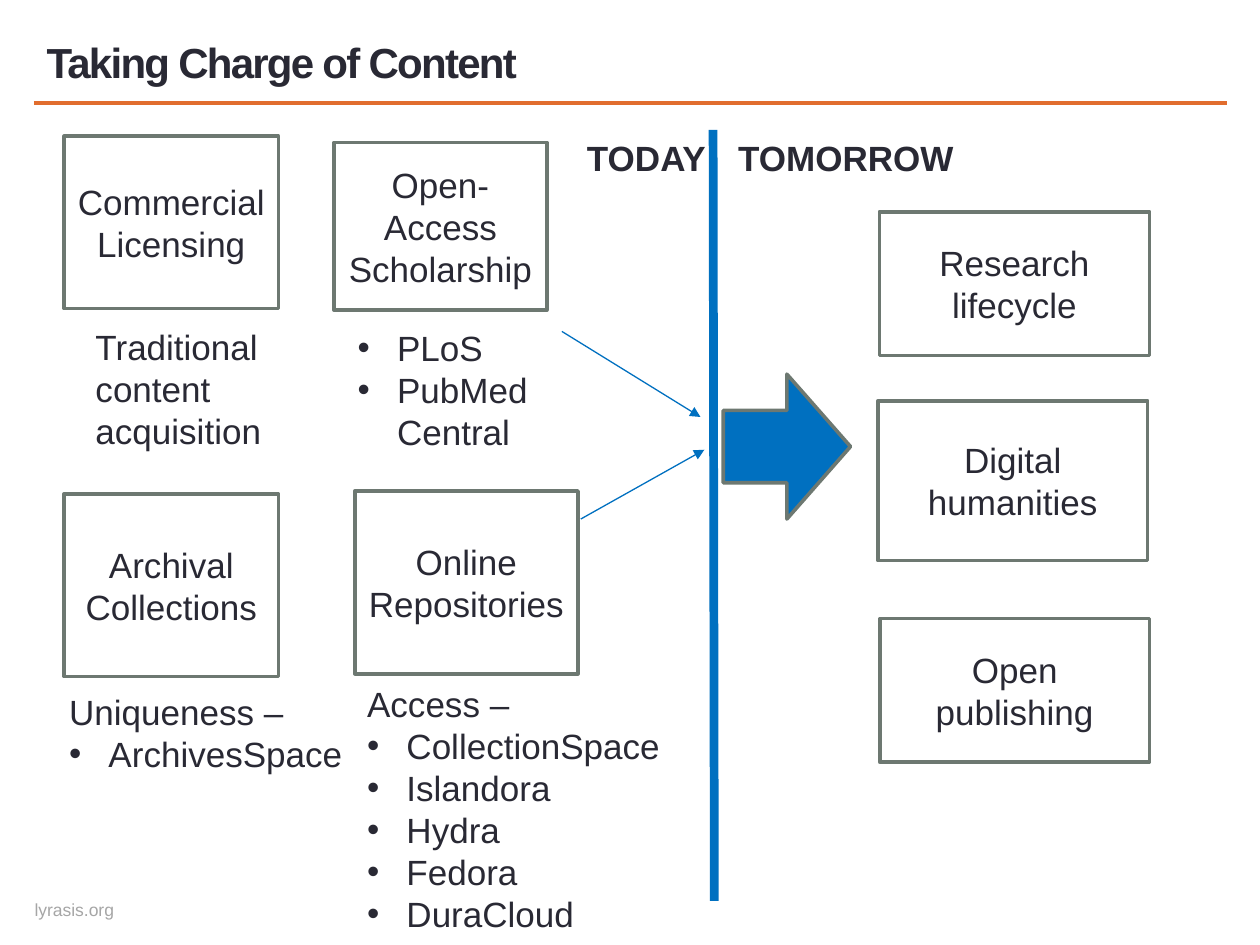
from pptx import Presentation
from pptx.dml.color import RGBColor
from pptx.enum.shapes import MSO_CONNECTOR as Line, MSO_SHAPE as Shape
from pptx.enum.text import MSO_ANCHOR as Anchor, PP_ALIGN as Align
from pptx.oxml.ns import qn
from pptx.util import Pt
from lxml.etree import SubElement


class Theme:
    font = "Arial"
    ink = RGBColor(0x29, 0x29, 0x34)
    grey = RGBColor(0xA6, 0xA6, 0xA6)
    frame = RGBColor(0x6D, 0x78, 0x71)
    orange = RGBColor(0xE1, 0x6D, 0x2E)
    blue = RGBColor(0x00, 0x70, 0xC0)
    title_size, body_size, footer_size = 24, 20, 10
    frame_width, divider_width, arrow_width = 2.08, 5, 0.75
    bullet_indent = 22.5


# Content: places are left, top, width, height in points
TITLE = "Taking Charge of Content"
FOOTER = "lyrasis.org"
BOXES = [
    (["Commercial", "Licensing"], (36.7, 77.8, 122.4, 98.6)),
    (["Open-Access Scholarship"], (190.8, 81.4, 121.7, 95.8)),
    (["Archival Collections"], (36.7, 282.2, 122.4, 104.4)),
    (["Online Repositories"], (202.7, 280.6, 127.6, 104.4)),
    (["Research lifecycle"], (502.5, 121, 154.4, 82.1)),
    (["Digital humanities"], (501.7, 229, 154.1, 91.4)),
    (["Open publishing"], (502.8, 353.5, 154.1, 82.1)),
]
# Notes: lead line, bullets, place, wrap
NOTES = [
    ("Traditional content acquisition", [], (47.5, 182.2, 118.1, 79.9), True),
    (None, ["PLoS", "PubMed Central"], (197.3, 182.9, 116.6, 101.5), True),
    ("Uniqueness –", ["ArchivesSpace"], (32.4, 391, 172.1, 55.4), False),
    ("Access –", ["CollectionSpace", "Islandora", "Hydra", "Fedora", "DuraCloud"],
     (202.7, 386.2, 194.4, 152.6), True),
]
HEADINGS = [
    ("TODAY", (328.3, 74.2, 82.8, 31.7)),
    ("TOMORROW", (414.7, 74.2, 139, 31.7)),
]
# Lines: start, end, colour, width, arrowhead
TITLE_RULE = ((19.4, 59), (701.3, 59), Theme.orange, Theme.frame_width, False)
LINES = [
    ((407.5, 74.2), (408.2, 514.8), Theme.blue, Theme.divider_width, False),
    ((321.1, 189.4), (400.3, 238.3), Theme.blue, Theme.arrow_width, True),
    ((331.9, 296.6), (402.5, 257), Theme.blue, Theme.arrow_width, True),
]
BIG_ARROW = (413.3, 213.8, 72.7, 82.8)


def points(values):
    return [Pt(value) for value in values]


def style(para, size=Theme.body_size, color=Theme.ink, bold=False):
    para.font.name = Theme.font
    para.font.size = Pt(size)
    para.font.bold = bold
    para.font.color.rgb = color


def add_bullet(para):
    props = para._p.get_or_add_pPr()
    props.set("marL", str(Pt(Theme.bullet_indent)))
    props.set("indent", str(-Pt(Theme.bullet_indent)))
    SubElement(props, qn("a:buFont")).set("typeface", Theme.font)
    SubElement(props, qn("a:buChar")).set("char", "•")


def add_shape(page, kind, place, fill=None):
    shape = page.shapes.add_shape(kind, *points(place))
    shape.shadow.inherit = False
    if fill is None:
        shape.fill.background()
    else:
        shape.fill.solid()
        shape.fill.fore_color.rgb = fill
    shape.line.color.rgb = Theme.frame
    shape.line.width = Pt(Theme.frame_width)
    return shape


def add_box(page, lines, place):
    box = add_shape(page, Shape.RECTANGLE, place)
    frame = box.text_frame
    frame.text = "\n".join(lines)
    frame.vertical_anchor = Anchor.MIDDLE
    for para in frame.paragraphs:
        para.alignment = Align.CENTER
        style(para)


def add_text(page, lines, place, wrap=False):
    frame = page.shapes.add_textbox(*points(place)).text_frame
    frame.word_wrap = wrap
    frame.text = "\n".join(lines)
    return frame


def add_note(page, lead, bullets, place, wrap):
    lines = ([lead] if lead else []) + bullets
    for para in add_text(page, lines, place, wrap).paragraphs:
        if para.text in bullets:
            add_bullet(para)
        style(para)


def add_line(page, start, end, color, width, arrowhead):
    line = page.shapes.add_connector(Line.STRAIGHT, *points(start + end))
    line.line.color.rgb = color
    line.line.width = Pt(width)
    if arrowhead:
        SubElement(line.line._get_or_add_ln(), qn("a:tailEnd")).set("type", "triangle")
    SubElement(line._element.spPr, qn("a:effectLst"))


def add_title(page):
    title = page.shapes.title
    title.left, title.top, title.width, title.height = points((19.4, 17.3, 527, 36))
    title.text_frame.text = TITLE
    title.text_frame.vertical_anchor = Anchor.BOTTOM
    para = title.text_frame.paragraphs[0]
    para.alignment = Align.LEFT
    style(para, Theme.title_size, bold=True)
    para.runs[0].font._element.set("spc", "-100")


def add_footer(page):
    frame = add_text(page, [FOOTER], (19.4, 513.4, 46.1, 12.2))
    frame.margin_left = frame.margin_right = frame.margin_top = frame.margin_bottom = 0
    frame.vertical_anchor = Anchor.MIDDLE
    frame.paragraphs[0].alignment = Align.CENTER
    style(frame.paragraphs[0], Theme.footer_size, Theme.grey)


def main():
    deck = Presentation()
    deck.slide_width, deck.slide_height = Pt(720), Pt(540)
    page = deck.slides.add_slide(deck.slide_layouts[5])

    # Title, rule and footer
    add_line(page, *TITLE_RULE)
    add_footer(page)
    add_title(page)

    # Boxes and their notes
    for box in BOXES:
        add_box(page, *box)
    for note in NOTES:
        add_note(page, *note)

    # Divider and arrows from today to tomorrow
    for line in LINES:
        add_line(page, *line)
    add_shape(page, Shape.RIGHT_ARROW, BIG_ARROW, Theme.blue)
    for text, place in HEADINGS:
        style(add_text(page, [text], place).paragraphs[0], bold=True)

    deck.save("out.pptx")


if __name__ == "__main__":
    main()
